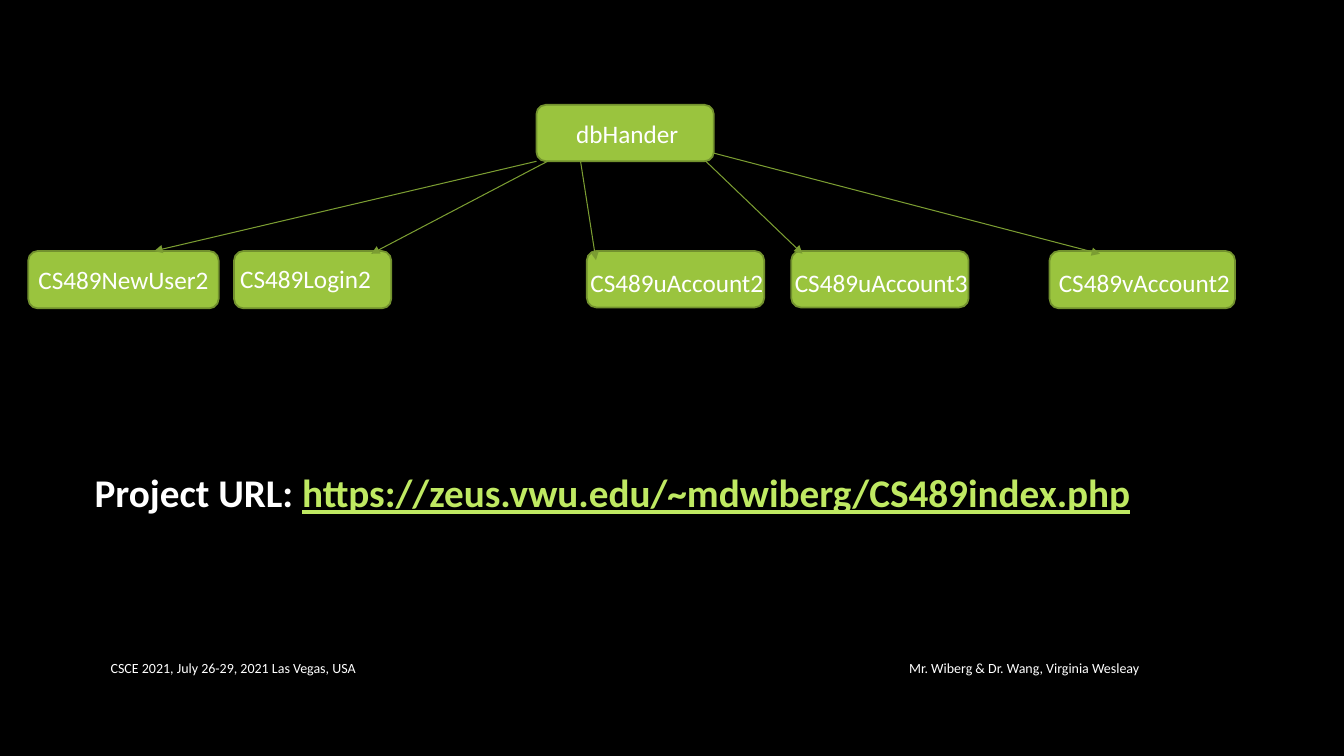
import dataclasses
import pptx
import pptx.dml.color
import pptx.enum.shapes
import pptx.enum.text
import pptx.oxml.ns
import pptx.util
from lxml import etree

Pt = pptx.util.Pt
Align = pptx.enum.text.PP_ALIGN
Anchor = pptx.enum.text.MSO_ANCHOR


@dataclasses.dataclass(frozen=True)
class Theme:
    """Colours, font and type sizes of the slide."""
    back: str = "000000"
    text: str = "FFFFFF"
    node: str = "9AC43E"
    edge: str = "72912E"
    arrow: str = "7B9D32"
    link: str = "BFE962"
    font: str = "Calibri"
    label: int = 18
    head: int = 28
    foot: int = 10


@dataclasses.dataclass(frozen=True)
class Child:
    """One child node: offsets of its box, its label and its arrow."""
    name: str
    left: float
    width: float
    height: float
    shift: tuple
    start: tuple
    end: tuple


THEME = Theme()
ROOT = (363, 0, 126.7, 40.3)
LEVEL = 104.4
CHILDREN = (
    Child("CS489NewUser2", 0, 136, 41, (0, 0), (363, 40.3), (90, 0)),
    Child("CS489Login2", 147, 112.3, 41, (-5, -1), (371, 40.3), (98, 2)),
    Child("CS489uAccount2", 399, 126.7, 40.3, (1, 2), (394.5, 40.3), (6.5, 6.5)),
    Child("CS489uAccount3", 545, 126.7, 40.3, (1, 2), (484, 40.3), (8, 2)),
    Child("CS489vAccount2", 729.5, 132.5, 41, (1.5, 2), (489.7, 34.5), (36, 2)),
)


def color(code):
    """Turn a hex code into a colour."""
    return pptx.dml.color.RGBColor.from_string(code)


def style(font, size, code=THEME.text, bold=False):
    """Set the face, size, colour and weight of a font."""
    font.name = THEME.font
    font.size = Pt(size)
    font.bold = bold
    font.color.rgb = color(code)


def node(slide, box, name, shift=(0, 0)):
    """Draw a rounded box with its label, moved off centre by the shift."""
    kind = pptx.enum.shapes.MSO_SHAPE.FLOWCHART_ALTERNATE_PROCESS
    shape = slide.shapes.add_shape(kind, *map(Pt, box))
    shape.shadow.inherit = False
    shape.fill.solid()
    shape.fill.fore_color.rgb = color(THEME.node)
    shape.line.color.rgb = color(THEME.edge)
    shape.line.width = Pt(1.25)
    frame = shape.text_frame
    frame.word_wrap = False
    frame.vertical_anchor = Anchor.MIDDLE
    across, down = shift
    frame.margin_left = Pt(max(0, 2 * across))
    frame.margin_right = Pt(max(0, -2 * across))
    frame.margin_top = Pt(max(0, 2 * down))
    frame.margin_bottom = Pt(max(0, -2 * down))
    para = frame.paragraphs[0]
    para.text = name
    para.alignment = Align.CENTER
    style(para.font, THEME.label)


def arrow(slide, start, end):
    """Draw a thin line with a triangle at its end."""
    kind = pptx.enum.shapes.MSO_CONNECTOR.STRAIGHT
    line = slide.shapes.add_connector(kind, *map(Pt, (*start, *end)))
    line.line.color.rgb = color(THEME.arrow)
    line.line.width = Pt(0.75)
    qn = pptx.oxml.ns.qn
    etree.SubElement(line.line._get_or_add_ln(), qn("a:tailEnd"), type="triangle")
    etree.SubElement(line._element.spPr, qn("a:effectLst"))


def tree(slide, left, top):
    """Draw the handler, its pages and the arrows between them."""
    for child in CHILDREN:
        box = (left + child.left, top + LEVEL, child.width, child.height)
        node(slide, box, child.name, child.shift)
    across, down, width, height = ROOT
    node(slide, (left + across, top + down, width, height), "dbHander", (1.5, 0))
    for child in CHILDREN:
        start = (left + child.start[0], top + child.start[1])
        end = (left + child.left + child.end[0], top + LEVEL + child.end[1])
        arrow(slide, start, end)


def field(slide, box, anchor=Anchor.TOP):
    """Add a wrapping text box and return its first paragraph."""
    frame = slide.shapes.add_textbox(*map(Pt, box)).text_frame
    frame.word_wrap = True
    frame.vertical_anchor = anchor
    return frame.paragraphs[0]


def address(slide, box):
    """Write the project address."""
    para = field(slide, box)
    style(para.font, THEME.head, bold=True)
    lead = para.add_run()
    lead.text = "Project URL: "
    style(lead.font, THEME.head, bold=True)
    link = para.add_run()
    link.text = "https://zeus.vwu.edu/~mdwiberg/CS489index.php"
    style(link.font, THEME.head, THEME.link, True)
    link.font.underline = True


def footer(slide, left, top, width, height):
    """Write the venue at the left and the authors at the right."""
    side = 216
    parts = (
        ("CSCE 2021, July 26-29, 2021 Las Vegas, USA", left, width - side, Align.LEFT),
        ("Mr. Wiberg & Dr. Wang, Virginia Wesleay", left + width - side, side, Align.RIGHT),
    )
    for words, start, span, align in parts:
        para = field(slide, (start, top, span, height), Anchor.MIDDLE)
        para.text = words
        para.alignment = align
        style(para.font, THEME.foot)


def main():
    """Build and save the slide."""
    deck = pptx.Presentation()
    deck.slide_width, deck.slide_height = Pt(960), Pt(540)
    slide = deck.slides.add_slide(deck.slide_layouts[6])
    slide.background.fill.solid()
    slide.background.fill.fore_color.rgb = color(THEME.back)
    tree(slide, 20.2, 74.9)
    address(slide, (60.5, 331.2, 803.5, 41))
    footer(slide, 72, 463, 748.8, 28.8)
    deck.save("out.pptx")


if __name__ == "__main__":
    main()
